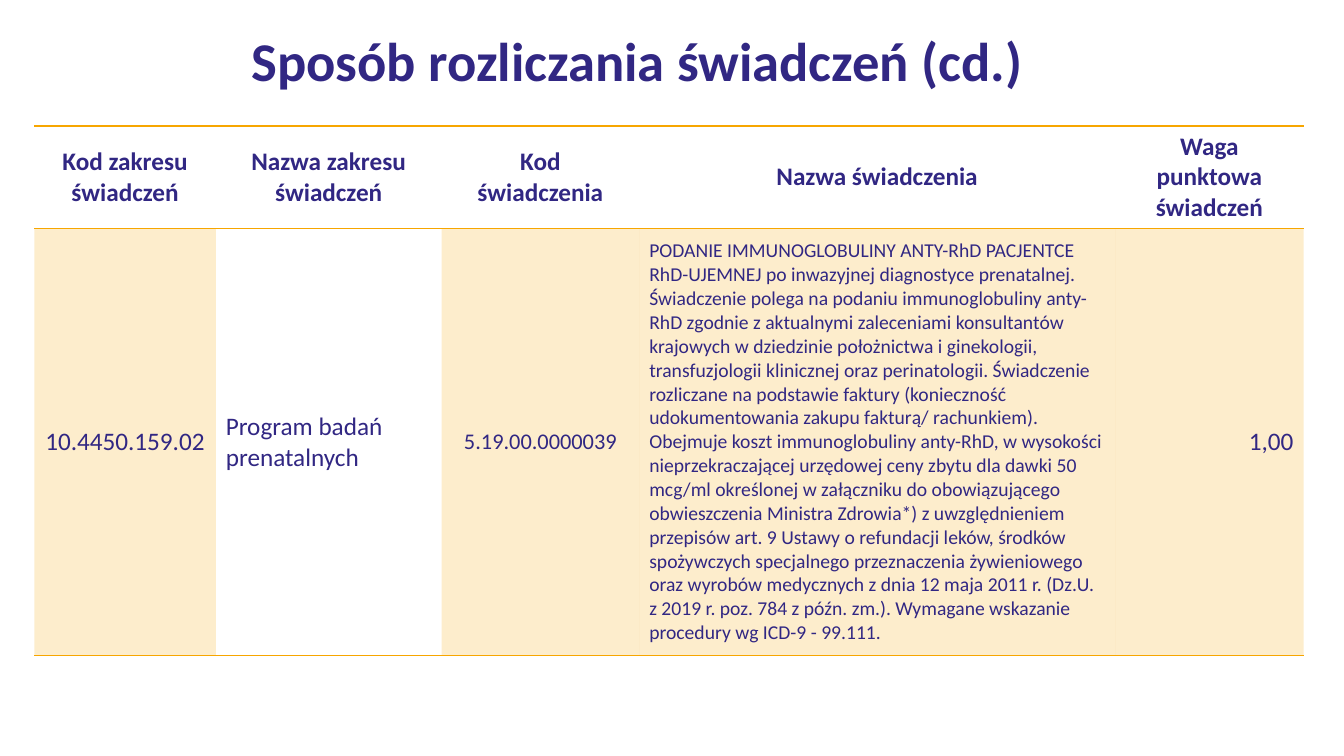
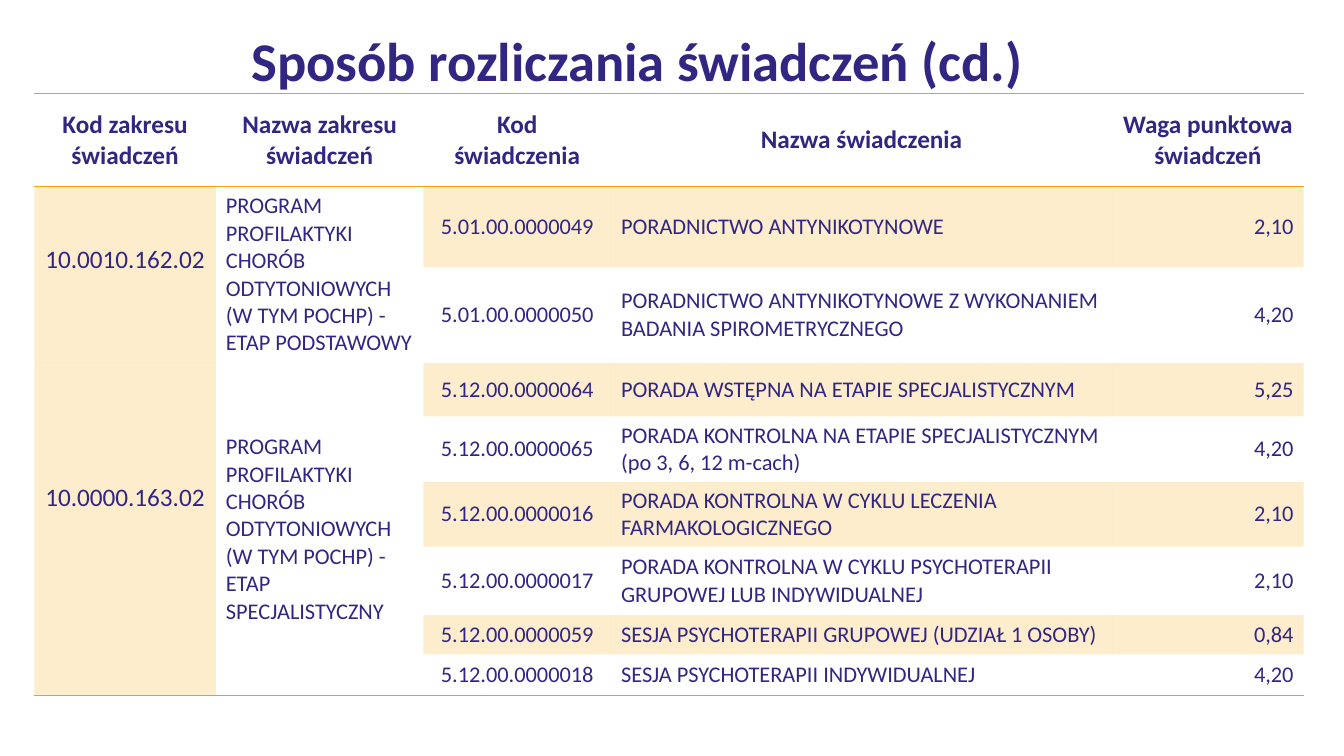
from dataclasses import dataclass, field

from lxml.etree import SubElement
from pptx import Presentation
from pptx.dml.color import RGBColor
from pptx.enum.text import MSO_ANCHOR as Anchor, PP_ALIGN as Align
from pptx.oxml.ns import qn
from pptx.util import Inches, Pt

NAVY = "312783"
AMBER = "F7A600"
GRAY = "A6A6A6"
FONT = "Calibri"
TITLE = "Sposób rozliczania świadczeń (cd.)"
PLAIN_TABLE_STYLE = "{2D5ABB26-0587-4C30-8999-92F81FD0307C}"
TINT_ALPHA = "20000"
HEADER_SIZE = 18
HEADERS = (
    "Kod zakresu świadczeń",
    "Nazwa zakresu świadczeń",
    "Kod\nświadczenia",
    "Nazwa świadczenia",
    "Waga punktowa świadczeń",
)
BODY_ALIGNMENTS = (Align.CENTER, Align.LEFT, Align.CENTER, Align.LEFT, Align.RIGHT)
IMMUNOGLOBULIN_SCOPE = (
    "PODANIE IMMUNOGLOBULINY ANTY-RhD PACJENTCE RhD-UJEMNEJ po inwazyjnej "
    "diagnostyce prenatalnej. Świadczenie polega na podaniu immunoglobuliny "
    "anty-RhD zgodnie z aktualnymi zaleceniami konsultantów krajowych w "
    "dziedzinie położnictwa i ginekologii, transfuzjologii klinicznej oraz "
    "perinatologii."
)
IMMUNOGLOBULIN_BILLING = (
    "Świadczenie rozliczane na podstawie faktury (konieczność "
    "udokumentowania zakupu fakturą/ rachunkiem). Obejmuje koszt "
    "immunoglobuliny anty-RhD, w wysokości nieprzekraczającej urzędowej ceny "
    "zbytu dla dawki 50 mcg/ml określonej w załączniku do obowiązującego "
    "obwieszczenia Ministra Zdrowia*) z uwzględnieniem przepisów art. 9 "
    "Ustawy o refundacji leków, środków spożywczych specjalnego przeznaczenia "
    "żywieniowego oraz wyrobów medycznych z dnia 12 maja 2011 r. (Dz.U. z "
    "2019 r. poz. 784 z późn. zm.). Wymagane wskazanie procedury wg "
    "ICD-9 - 99.111."
)


@dataclass
class Line:
    """Colour and width in points of a horizontal table rule."""

    color: str
    width: float


@dataclass
class Programme:
    """A service range that covers one or more service rows."""

    code: str
    name: str
    services: list[tuple[str, str, str]]
    code_lift: float = 0


@dataclass
class PriceTable:
    """Geometry, rules and contents of the table on one slide."""

    top: float
    columns: tuple[float, ...]
    rows: tuple[float, ...]
    sizes: tuple[int, ...]
    outer: Line
    header_rule: Line
    programmes: list[Programme] = field(default_factory=list)


TABLES = [
    PriceTable(
        top=1.25,
        columns=(1.8, 2.24, 1.96, 4.72, 1.87),
        rows=(1.01, 4.24),
        sizes=(18, 18, 16, 14, 18),
        outer=Line(AMBER, 1),
        header_rule=Line(AMBER, 1),
        programmes=[
            Programme("10.4450.159.02", "Program badań prenatalnych", [
                ("5.19.00.0000039", f"{IMMUNOGLOBULIN_SCOPE} {IMMUNOGLOBULIN_BILLING}", "1,00"),
            ]),
        ],
    ),
    PriceTable(
        top=0.93,
        columns=(1.8, 2.06, 1.86, 4.97, 1.9),
        rows=(0.92, 0.8, 0.95, 0.53, 0.65, 0.63, 0.68, 0.39, 0.41),
        sizes=(18, 16, 16, 16, 16),
        outer=Line(GRAY, 0.75),
        header_rule=Line(AMBER, 1.5),
        programmes=[
            Programme(
                "10.0010.162.02",
                "PROGRAM PROFILAKTYKI CHORÓB ODTYTONIOWYCH (W TYM POCHP) - ETAP PODSTAWOWY",
                [
                    ("5.01.00.0000049", "PORADNICTWO ANTYNIKOTYNOWE", "2,10"),
                    ("5.01.00.0000050", "PORADNICTWO ANTYNIKOTYNOWE Z WYKONANIEM "
                     "BADANIA SPIROMETRYCZNEGO", "4,20"),
                ],
                code_lift=0.15,
            ),
            Programme(
                "10.0000.163.02",
                "PROGRAM PROFILAKTYKI CHORÓB ODTYTONIOWYCH (W TYM POCHP) - ETAP SPECJALISTYCZNY",
                [
                    ("5.12.00.0000064", "PORADA WSTĘPNA NA ETAPIE SPECJALISTYCZNYM", "5,25"),
                    ("5.12.00.0000065", "PORADA KONTROLNA NA ETAPIE SPECJALISTYCZNYM "
                     "(po 3, 6, 12 m-cach)", "4,20"),
                    ("5.12.00.0000016", "PORADA KONTROLNA W CYKLU LECZENIA "
                     "FARMAKOLOGICZNEGO", "2,10"),
                    ("5.12.00.0000017", "PORADA KONTROLNA W CYKLU PSYCHOTERAPII "
                     "GRUPOWEJ LUB INDYWIDUALNEJ", "2,10"),
                    ("5.12.00.0000059", "SESJA PSYCHOTERAPII GRUPOWEJ (UDZIAŁ 1 OSOBY)", "0,84"),
                    ("5.12.00.0000018", "SESJA PSYCHOTERAPII INDYWIDUALNEJ", "4,20"),
                ],
                code_lift=0.31,
            ),
        ],
    ),
]


def rgb(color: str) -> RGBColor:
    """Turn a hex string into a colour."""
    return RGBColor.from_string(color)


def format_text(text_frame, size: float, alignment, bold: bool) -> None:
    """Apply the shared font and alignment to every paragraph."""
    for paragraph in text_frame.paragraphs:
        paragraph.alignment = alignment
        for run in paragraph.runs:
            run.font.name = FONT
            run.font.size = Pt(size)
            run.font.bold = bold
            run.font.color.rgb = rgb(NAVY)


def add_title(slide) -> None:
    """Place and format the slide title."""
    title = slide.shapes.title
    title.left, title.top = Inches(0.57), Inches(0.2)
    title.width, title.height = Inches(11.5), Inches(0.87)
    title.text_frame.text = TITLE
    title.text_frame.vertical_anchor = Anchor.MIDDLE
    title.text_frame.paragraphs[0].line_spacing = 0.9
    format_text(title.text_frame, 39, Align.CENTER, True)


def add_border(cell, tag: str, line: Line) -> None:
    """Draw one border of a cell, before any fill is set."""
    properties = cell._tc.get_or_add_tcPr()
    border = SubElement(properties, qn(tag), w=str(Pt(line.width)))
    fill = SubElement(border, qn("a:solidFill"))
    SubElement(fill, qn("a:srgbClr"), val=line.color)


def fill_cell(cell, tinted: bool) -> None:
    """Give a cell the translucent amber tint, or no fill."""
    if not tinted:
        cell.fill.background()
        return
    cell.fill.solid()
    cell.fill.fore_color.rgb = rgb(AMBER)
    color = cell._tc.tcPr.find(qn("a:solidFill")).find(qn("a:srgbClr"))
    SubElement(color, qn("a:alpha"), val=TINT_ALPHA)


def write_cell(cell, text: str, size: float, alignment, bold: bool = False) -> None:
    """Write centred-height text into a cell."""
    cell.text_frame.text = text
    cell.vertical_anchor = Anchor.MIDDLE
    format_text(cell.text_frame, size, alignment, bold)


def style_grid(table, price_table: PriceTable) -> None:
    """Set the rules and the column and row banding of a table."""
    last_row = len(price_table.rows) - 1
    for row in range(last_row + 1):
        for column in range(len(price_table.columns)):
            cell = table.cell(row, column)
            bottom_row = row + (cell.span_height if cell.is_merge_origin else 1) - 1
            if row == 0:
                add_border(cell, "a:lnT", price_table.outer)
                add_border(cell, "a:lnB", price_table.header_rule)
            elif bottom_row == last_row:
                add_border(cell, "a:lnB", price_table.outer)
            fill_cell(cell, row > 0 and (column == 0 or (column > 1 and row % 2 == 1)))


def add_price_table(slide, price_table: PriceTable) -> None:
    """Build one table of services and their point weights."""
    graphic_frame = slide.shapes.add_table(
        len(price_table.rows), len(price_table.columns),
        Inches(0.34), Inches(price_table.top),
        Inches(sum(price_table.columns)), Inches(sum(price_table.rows)),
    )
    table = graphic_frame.table
    table.horz_banding = False
    table._tbl.tblPr.find(qn("a:tableStyleId")).text = PLAIN_TABLE_STYLE
    for column, width in zip(table.columns, price_table.columns):
        column.width = Inches(width)
    for row, height in zip(table.rows, price_table.rows):
        row.height = Inches(height)
    for column, header in enumerate(HEADERS):
        write_cell(table.cell(0, column), header, HEADER_SIZE, Align.CENTER, True)

    first_row = 1
    for programme in price_table.programmes:
        last_row = first_row + len(programme.services) - 1
        for offset, service in enumerate(programme.services):
            for column, text in enumerate(service, start=2):
                write_cell(table.cell(first_row + offset, column), text,
                           price_table.sizes[column], BODY_ALIGNMENTS[column])
        for column, text in enumerate((programme.code, programme.name)):
            cell = table.cell(first_row, column)
            if last_row > first_row:
                cell.merge(table.cell(last_row, column))
            write_cell(cell, text, price_table.sizes[column], BODY_ALIGNMENTS[column])
        if programme.code_lift:
            table.cell(first_row, 0).margin_bottom = Inches(0.05 + 2 * programme.code_lift)
        first_row = last_row + 1
    style_grid(table, price_table)


def main() -> None:
    """Build and save the presentation."""
    presentation = Presentation()
    presentation.slide_width = Inches(13.33)
    presentation.slide_height = Inches(7.5)
    for price_table in TABLES:
        slide = presentation.slides.add_slide(presentation.slide_layouts[5])
        add_title(slide)
        add_price_table(slide, price_table)
    presentation.save("out.pptx")


if __name__ == "__main__":
    main()
